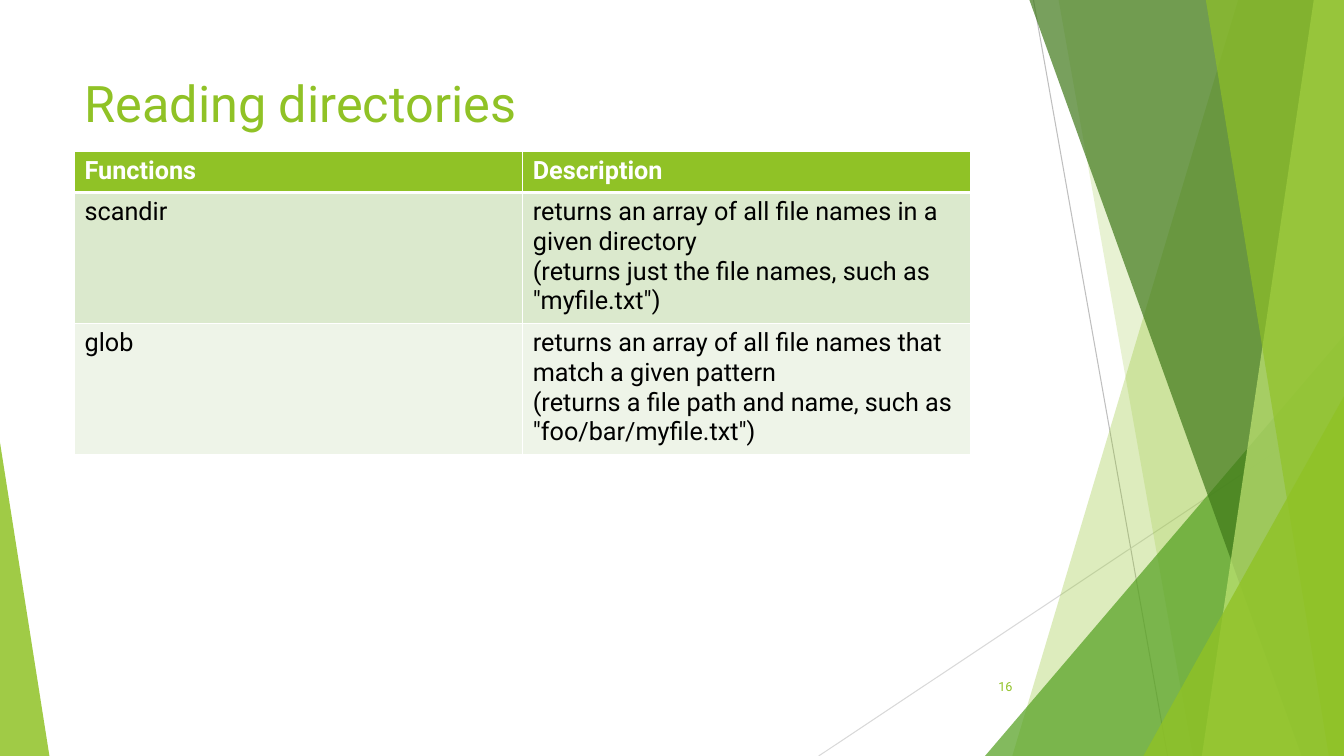
from dataclasses import dataclass

from lxml import etree
from pptx import Presentation
from pptx.dml.color import RGBColor
from pptx.enum.shapes import MSO_CONNECTOR, MSO_SHAPE
from pptx.enum.text import MSO_ANCHOR, PP_ALIGN
from pptx.oxml.ns import qn
from pptx.util import Inches, Pt

LINE = MSO_CONNECTOR.STRAIGHT
TRIANGLE = MSO_SHAPE.ISOSCELES_TRIANGLE
TOP, MIDDLE = MSO_ANCHOR.TOP, MSO_ANCHOR.MIDDLE
LEFT, RIGHT = PP_ALIGN.LEFT, PP_ALIGN.RIGHT

WIDE, HIGH = 13.33, 7.5


@dataclass(frozen=True)
class Theme:
    font: str = "Roboto"
    lime: str = "90C226"
    green: str = "54A021"
    dark: str = "3F7819"
    pale: str = "C0E474"
    white: str = "FFFFFF"
    black: str = "000000"
    bands: tuple = ("DBE9CD", "EEF4E8")
    rules: tuple = ("BFBFBF", "D9D9D9")
    title: int = 36
    body: int = 18
    small: int = 9


THEME = Theme()

ROWS = [
    ("Functions", "Description"),
    ("scandir", "returns an array of all file names in a given directory\n"
                "(returns just the file names, such as \"myfile.txt\")"),
    ("glob", "returns an array of all file names that match a given pattern\n"
             "(returns a file path and name, such as \"foo/bar/myfile.txt\")"),
]


def style(font, color, **values):
    values = {"name": THEME.font, **values}
    for key, value in values.items():
        setattr(font, key, value)
    font.color.rgb = RGBColor.from_string(color)


def paint(shape, color, alpha):
    """Fill a shape with a colour at alpha percent, with no line or shadow."""
    shape.shadow.inherit = False
    shape.line.fill.background()
    shape.fill.solid()
    shape.fill.fore_color.rgb = RGBColor.from_string(color)
    tone = shape.fill._xPr.find(qn("a:solidFill"))[0]
    etree.SubElement(tone, qn("a:alpha"), val=str(alpha * 1000))


def add_rule(slide, start, end, color):
    rule = slide.shapes.add_connector(LINE, *map(Inches, start + end))
    rule.line.width = Pt(0.75)
    rule.line.color.rgb = RGBColor.from_string(color)
    etree.SubElement(rule._element.spPr, qn("a:effectLst"))


def add_shard(slide, head, foot, color, alpha):
    """Fill from a slanted edge to the right side of the slide."""
    points = [(head, 0), (WIDE, 0), (WIDE, HIGH), (foot, HIGH)]
    points = [(Inches(x), Inches(y)) for x, y in points]
    pen = slide.shapes.build_freeform(*points[0])
    pen.add_line_segments(points[1:])
    paint(pen.convert_to_shape(), color, alpha)


def add_wedge(slide, left, top, width, tip, color, alpha):
    """Stand a triangle on the bottom edge, with its tip at 0 to 1 across."""
    box = map(Inches, (left, top, width, HIGH - top))
    wedge = slide.shapes.add_shape(TRIANGLE, *box)
    wedge.adjustments[0] = tip
    paint(wedge, color, alpha)


def add_facets(slide):
    add_rule(slide, (10.25, 0), (11.58, HIGH), THEME.rules[0])
    add_rule(slide, (WIDE, 4.03), (8.12, HIGH), THEME.rules[1])
    add_shard(slide, 12.28, 10.04, THEME.lime, 30)
    add_shard(slide, 10.5, 11.83, THEME.lime, 20)
    add_wedge(slide, 9.77, 3.33, 3.56, 1, THEME.green, 72)
    add_shard(slide, 10.21, 12.91, THEME.dark, 70)
    add_shard(slide, 13.03, 11.92, THEME.pale, 70)
    add_shard(slide, 11.96, 13.18, THEME.lime, 65)
    add_wedge(slide, 11.34, 3.93, 1.99, 1, THEME.lime, 80)
    add_wedge(slide, 0, 4.39, 0.49, 0, THEME.lime, 85)


def add_label(slide, box, text, size, anchor=TOP, align=LEFT):
    frame = slide.shapes.add_textbox(*map(Inches, box)).text_frame
    frame.word_wrap = True
    frame.vertical_anchor = anchor
    para = frame.paragraphs[0]
    para.alignment = align
    run = para.add_run()
    run.text = text
    style(run.font, THEME.lime, size=Pt(size))


def add_edges(cell, widths):
    """Draw white cell borders; widths maps a side (L, R, T, B) to points."""
    props = cell._tc.get_or_add_tcPr()
    for side, width in widths.items():
        edge = etree.SubElement(props, qn("a:ln" + side), w=str(Pt(width)))
        fill = etree.SubElement(edge, qn("a:solidFill"))
        etree.SubElement(fill, qn("a:srgbClr"), val=THEME.white)


def fill_cell(cell, text, row):
    head = row == 0
    add_edges(cell, {"L": 1, "R": 1, "T": 3 if row == 1 else 1,
                     "B": 3 if head else 1})
    back = THEME.lime if head else THEME.bands[(row - 1) % 2]
    cell.fill.solid()
    cell.fill.fore_color.rgb = RGBColor.from_string(back)
    para = cell.text_frame.paragraphs[0]
    for i, line in enumerate(text.split("\n")):
        if i:
            para.add_line_break()
        run = para.add_run()
        run.text = line
        style(run.font, THEME.white if head else THEME.black,
              size=Pt(THEME.body), bold=head)


def add_grid(slide, box, rows, first):
    """Place a table with a header row of height first and equal rows below."""
    count = len(rows)
    grid = slide.shapes.add_table(count, len(rows[0]), *map(Inches, box)).table
    grid.horz_banding = False
    rest = (box[3] - first) / (count - 1)
    for r, texts in enumerate(rows):
        grid.rows[r].height = Inches(rest if r else first)
        for c, text in enumerate(texts):
            fill_cell(grid.cell(r, c), text, r)


def main():
    deck = Presentation()
    deck.slide_width, deck.slide_height = Inches(WIDE), Inches(HIGH)
    slide = deck.slides.add_slide(deck.slide_layouts[6])
    add_facets(slide)
    add_label(slide, (0.74, 0.67, 9.4, 1.44), "Reading directories",
              THEME.title)
    add_label(slide, (9.39, 6.61, 0.75, 0.4), "16", THEME.small,
              MIDDLE, RIGHT)
    add_grid(slide, (0.74, 1.5, 8.89, 2.95), ROWS, 0.41)
    deck.save("out.pptx")


if __name__ == "__main__":
    main()
